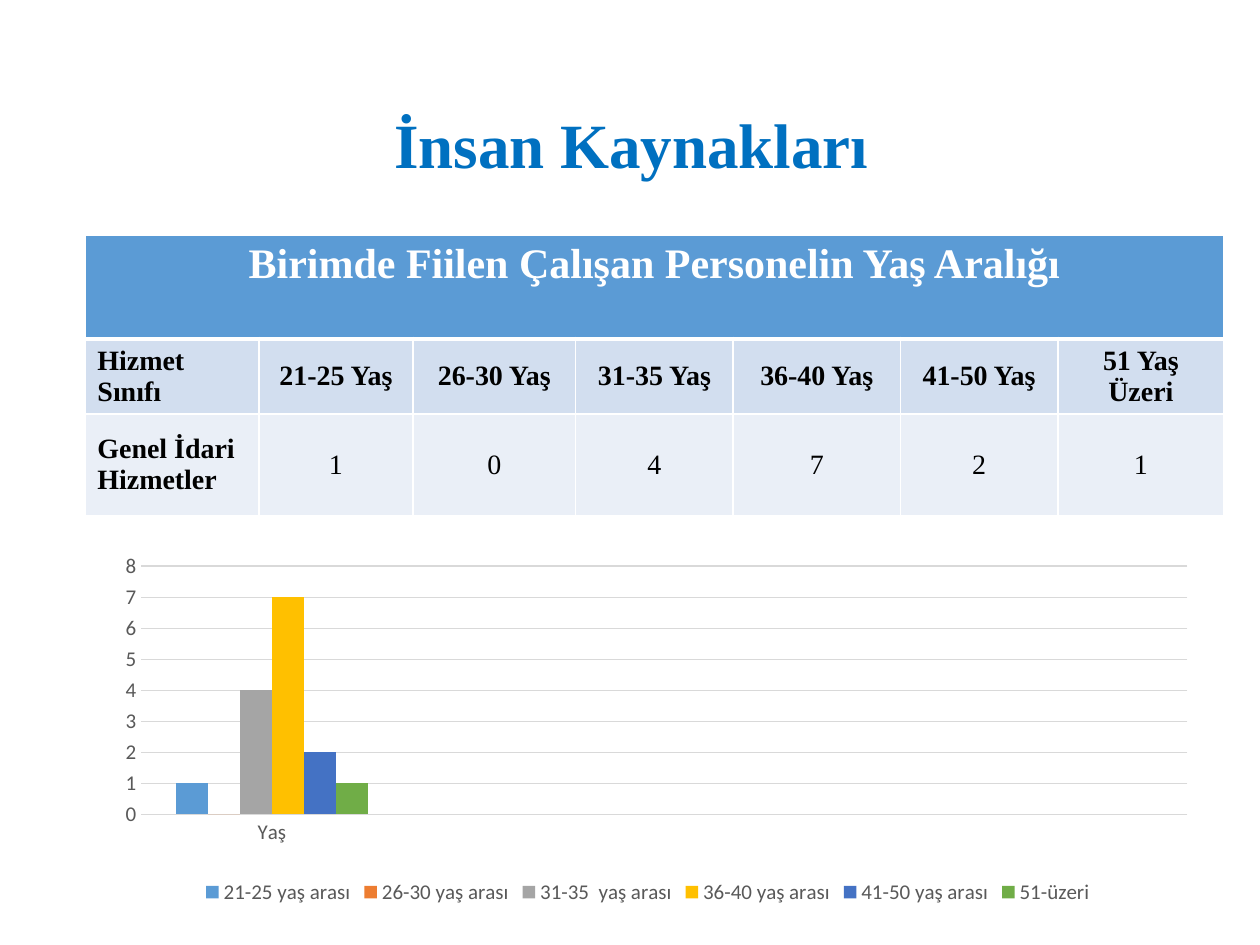
import pptx
import pptx.chart.data
import pptx.dml.color
import pptx.enum.chart
import pptx.enum.text
import pptx.oxml
import pptx.oxml.ns
import pptx.util

Pt = pptx.util.Pt
ALIGN = pptx.enum.text.PP_ALIGN
ANCHOR = pptx.enum.text.MSO_ANCHOR
NO_TICK = pptx.enum.chart.XL_TICK_MARK.NONE
COLORS = {
    "title": "0070C0", "white": "FFFFFF", "black": "000000",
    "header": "5B9BD5", "band_dark": "D2DEEF", "band_light": "EAEFF7",
    "label": "595959", "grid": "D9D9D9",
}


def style_font(font, size, color, name="Times New Roman", bold=False):
    font.size = Pt(size)
    font.name = name
    font.bold = bold
    font.color.rgb = pptx.dml.color.RGBColor.from_string(COLORS[color])


def style_cell(cell, fill, bottom_width=1):
    """Fill a cell and give it white borders."""
    cell.vertical_anchor = ANCHOR.MIDDLE
    properties = cell._tc.get_or_add_tcPr()
    for side, width in (("L", 1), ("R", 1), ("T", 1), ("B", bottom_width)):
        properties.append(pptx.oxml.parse_xml(
            f'<a:ln{side} {pptx.oxml.ns.nsdecls("a")} w="{Pt(width)}">'
            f'<a:solidFill><a:srgbClr val="{COLORS["white"]}"/></a:solidFill></a:ln{side}>'))
    cell.fill.solid()
    cell.fill.fore_color.rgb = pptx.dml.color.RGBColor.from_string(COLORS[fill])


deck = pptx.Presentation()
deck.slide_width, deck.slide_height = Pt(720), Pt(540)
page = deck.slides.add_slide(deck.slide_layouts[5])

# Title
title = page.shapes.title
title.left, title.top, title.width, title.height = Pt(36.7), Pt(31.7), Pt(648), Pt(73.4)
frame = title.text_frame
frame.text = "İnsan Kaynakları"
frame.auto_size = pptx.enum.text.MSO_AUTO_SIZE.NONE
frame.vertical_anchor = ANCHOR.BOTTOM
frame.margin_bottom = Pt(1)
para = frame.paragraphs[0]
para.alignment = ALIGN.CENTER
para.line_spacing = 0.9
style_font(para.runs[0].font, 36, "title", bold=True)

# Age table
column_widths = [99.5, 88, 93, 90, 95.5, 90, 95]
row_heights = [59.5, 42.5, 58]
body_rows = [
    ["Hizmet Sınıfı", "21-25 Yaş", "26-30 Yaş", "31-35 Yaş", "36-40 Yaş", "41-50 Yaş",
     "51 Yaş Üzeri"],
    ["Genel İdari Hizmetler", "1", "0", "4", "7", "2", "1"],
]
table = page.shapes.add_table(3, 7, Pt(48.5), Pt(134.2),
                              Pt(sum(column_widths)), Pt(sum(row_heights))).table
for column, width in zip(table.columns, column_widths):
    column.width = Pt(width)
for row, height in zip(table.rows, row_heights):
    row.height = Pt(height)

header = table.cell(0, 0)
header.merge(table.cell(0, 6))
for cell in table.rows[0].cells:
    style_cell(cell, "header", bottom_width=3)
header.vertical_anchor = ANCHOR.TOP
header.text = "Birimde Fiilen Çalışan Personelin Yaş Aralığı"
para = header.text_frame.paragraphs[0]
para.alignment = ALIGN.CENTER
style_font(para.runs[0].font, 24, "white", bold=True)

for r, (texts, fill) in enumerate(zip(body_rows, ("band_dark", "band_light")), start=1):
    for c, text in enumerate(texts):
        cell = table.cell(r, c)
        style_cell(cell, fill, bottom_width=1)
        if r == 1:
            cell._tc.tcPr.find(pptx.oxml.ns.qn("a:lnT")).set("w", str(Pt(3)))
        cell.text = text
        para = cell.text_frame.paragraphs[0]
        para.alignment = ALIGN.LEFT if c == 0 else ALIGN.CENTER
        style_font(para.runs[0].font, 16, "black", bold=(r == 1 or c == 0))

# Age chart: one named category followed by three empty ones
age_series = [
    ("21-25 yaş arası", 1, "5B9BD5"),
    ("26-30 yaş arası", 0, "ED7D31"),
    ("31-35  yaş arası", 4, "A5A5A5"),
    ("36-40 yaş arası", 7, "FFC000"),
    ("41-50 yaş arası", 2, "4472C4"),
    ("51-üzeri", 1, "70AD47"),
]
data = pptx.chart.data.CategoryChartData()
data.categories = ["Yaş", "", "", ""]
for name, value, color in age_series:
    data.add_series(name, [value, None, None, None])
chart = page.shapes.add_chart(pptx.enum.chart.XL_CHART_TYPE.COLUMN_CLUSTERED,
                              Pt(55.5), Pt(311), Pt(629.3), Pt(208.8), data).chart
chart.has_title = False
style_font(chart.font, 10, "black", "Calibri")
plot = chart.plots[0]
plot.gap_width = 219
plot.overlap = 0
plot.vary_by_categories = False
for series, (name, value, color) in zip(plot.series, age_series):
    series.format.fill.solid()
    series.format.fill.fore_color.rgb = pptx.dml.color.RGBColor.from_string(color)

chart.has_legend = True
chart.legend.position = pptx.enum.chart.XL_LEGEND_POSITION.BOTTOM
chart.legend.include_in_layout = False
style_font(chart.legend.font, 12, "label", "Calibri")

category_axis, value_axis = chart.category_axis, chart.value_axis
for axis in (category_axis, value_axis):
    axis.major_tick_mark = axis.minor_tick_mark = NO_TICK
    style_font(axis.tick_labels.font, 12, "label", "Calibri")
value_axis.has_major_gridlines = True
value_axis.minimum_scale, value_axis.maximum_scale, value_axis.major_unit = 0, 8, 1
value_axis.format.line.fill.background()
for line in (category_axis.format.line, value_axis.major_gridlines.format.line):
    line.width = Pt(0.75)
    line.color.rgb = pptx.dml.color.RGBColor.from_string(COLORS["grid"])

plot_area = chart._chartSpace.chart.plotArea
for layout in plot_area.findall(pptx.oxml.ns.qn("c:layout")):
    plot_area.remove(layout)
plot_area.insert(0, pptx.oxml.parse_xml(
    f'<c:layout {pptx.oxml.ns.nsdecls("c")}><c:manualLayout><c:layoutTarget val="inner"/>'
    '<c:xMode val="edge"/><c:yMode val="edge"/><c:x val="0.04"/><c:y val="0.06"/>'
    '<c:w val="0.95"/><c:h val="0.68"/></c:manualLayout></c:layout>'))

deck.save("out.pptx")
